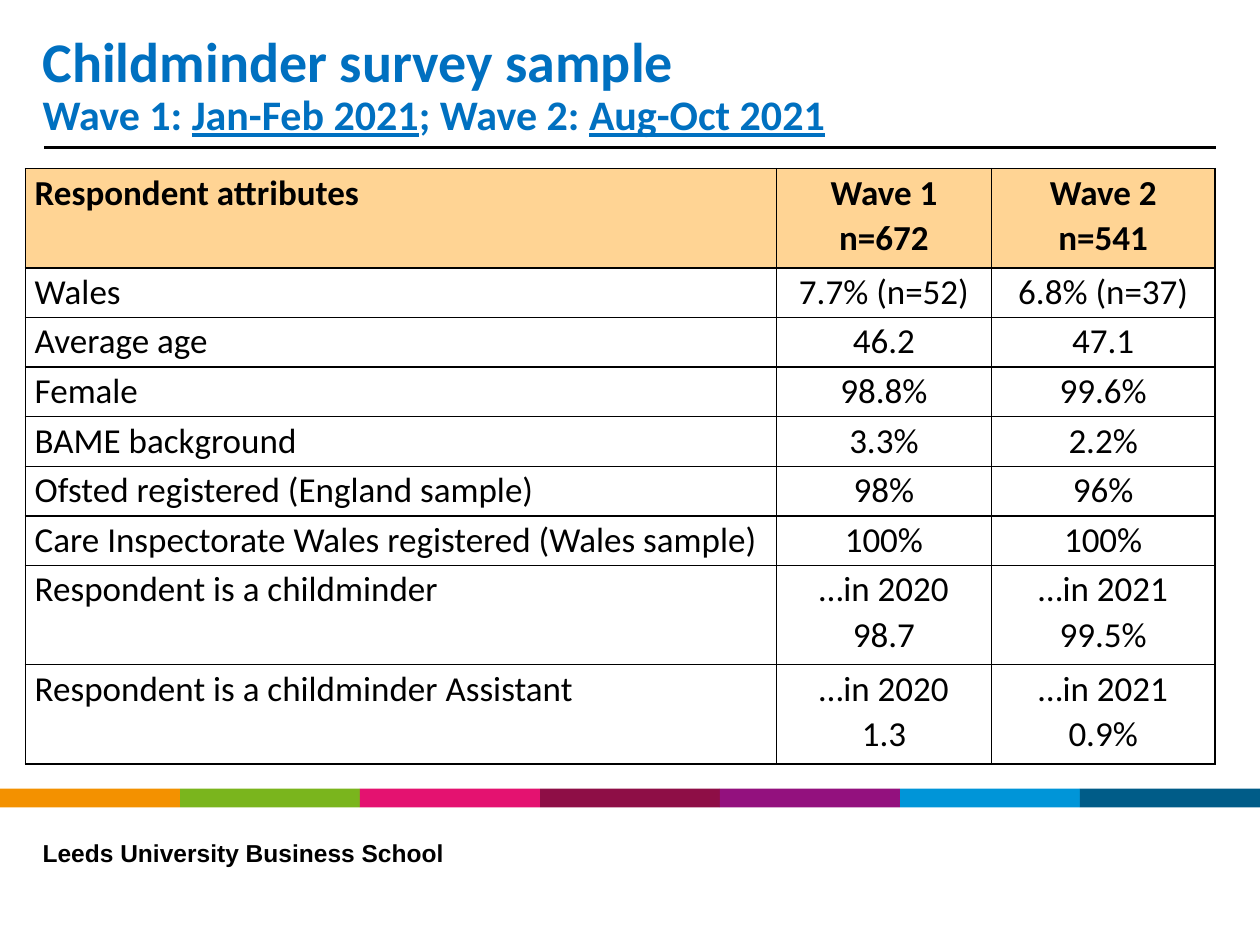
from lxml.etree import SubElement
from pptx import Presentation
from pptx.dml.color import RGBColor
from pptx.enum.shapes import MSO_CONNECTOR, MSO_SHAPE
from pptx.enum.text import MSO_ANCHOR, PP_ALIGN
from pptx.oxml.ns import qn
from pptx.util import Cm, Pt

COLORS = {"text": "000000", "title": "0070C0", "header": "FFD494"}
BAND = ["F39100", "7AB51D", "E41270", "8E0E46", "93117E", "0095D8", "005C88"]
COL_WIDTHS = [15.14, 4.34, 4.5]
ROWS = [
    ("Respondent attributes", "Wave 1\nn=672", "Wave 2\nn=541"),
    ("Wales", "7.7% (n=52)", "6.8% (n=37)"),
    ("Average age", "46.2", "47.1"),
    ("Female", "98.8%", "99.6%"),
    ("BAME background", "3.3%", "2.2%"),
    ("Ofsted registered (England sample)", "98%", "96%"),
    ("Care Inspectorate Wales registered (Wales sample)", "100%", "100%"),
    ("Respondent is a childminder", "…in 2020\n98.7", "…in 2021\n99.5%"),
    ("Respondent is a childminder Assistant", "…in 2020\n1.3", "…in 2021\n0.9%"),
]


def style(p, font, size, color, bold, spacing):
    p.line_spacing = spacing
    p.font.name = font
    p.font.size = Pt(size)
    p.font.bold = bold
    p.font.color.rgb = RGBColor.from_string(COLORS[color])


def add_text_box(s, left, top, width, height):
    """Add a wrapping text box without margins and return its text frame."""
    tf = s.shapes.add_textbox(Cm(left), Cm(top), Cm(width), Cm(height)).text_frame
    tf.word_wrap = True
    tf.margin_left = tf.margin_right = tf.margin_top = tf.margin_bottom = 0
    return tf


prs = Presentation()
prs.slide_width, prs.slide_height = Cm(25.4), Cm(19.05)
s = prs.slides.add_slide(prs.slide_layouts[6])

# Rule under the title
rule = s.shapes.add_connector(MSO_CONNECTOR.STRAIGHT, Cm(0.89), Cm(2.97), Cm(24.51), Cm(2.97))
rule.line.color.rgb = RGBColor.from_string(COLORS["text"])
rule.line.width = Pt(1.5)
SubElement(rule._element.spPr, qn("a:effectLst"))

# Footer
p = add_text_box(s, 0.86, 17, 9.42, 0.48).paragraphs[0]
p.text = "Leeds University Business School"
style(p, "Arial", 14, "text", True, 0.8)

# Colour band
band_width = prs.slide_width / len(BAND)
for i, color in enumerate(BAND):
    left = round(i * band_width)
    sp = s.shapes.add_shape(MSO_SHAPE.RECTANGLE, left, Cm(15.9),
                            round((i + 1) * band_width) - left, Cm(0.38))
    sp.shadow.inherit = False
    sp.fill.solid()
    sp.fill.fore_color.rgb = RGBColor.from_string(color)
    sp.line.fill.background()

# Title
tf = add_text_box(s, 0.86, 0.61, 17.93, 2.21)
tf.vertical_anchor = MSO_ANCHOR.BOTTOM
p = tf.paragraphs[0]
style(p, "Calibri", 32, "title", True, 0.9)
p.add_run().text = "Childminder survey sample"
p.add_line_break()
for text, underline in [("Wave 1: ", False), ("Jan-Feb 2021", True),
                        ("; Wave 2: ", False), ("Aug-Oct 2021", True)]:
    r = p.add_run()
    r.text = text
    r.font.size = Pt(24)
    r.font.underline = underline

# Table
table = s.shapes.add_table(len(ROWS), len(COL_WIDTHS), Cm(0.51), Cm(3.4),
                           Cm(sum(COL_WIDTHS)), Cm(12)).table
table.first_row = table.horz_banding = False
for column, width in zip(table.columns, COL_WIDTHS):
    column.width = Cm(width)
for i, row in enumerate(ROWS):
    table.rows[i].height = Cm(2 if "\n" in row[1] else 1)
    for j, text in enumerate(row):
        cell = table.cell(i, j)
        cell.margin_left = cell.margin_right = Cm(0.19)
        cell.margin_top = cell.margin_bottom = 0
        for side in ("lnL", "lnR", "lnT", "lnB"):
            ln = SubElement(cell._tc.get_or_add_tcPr(), qn(f"a:{side}"), w=str(Pt(1)))
            fill = SubElement(ln, qn("a:solidFill"))
            SubElement(fill, qn("a:srgbClr"), val=COLORS["text"])
        if i == 0:
            cell.fill.solid()
            cell.fill.fore_color.rgb = RGBColor.from_string(COLORS["header"])
        else:
            cell.fill.background()
        cell.text_frame.text = text
        for p in cell.text_frame.paragraphs:
            p.alignment = PP_ALIGN.CENTER if j else PP_ALIGN.LEFT
            style(p, "Calibri", 20, "text", i == 0, 1.07)

prs.save("out.pptx")
